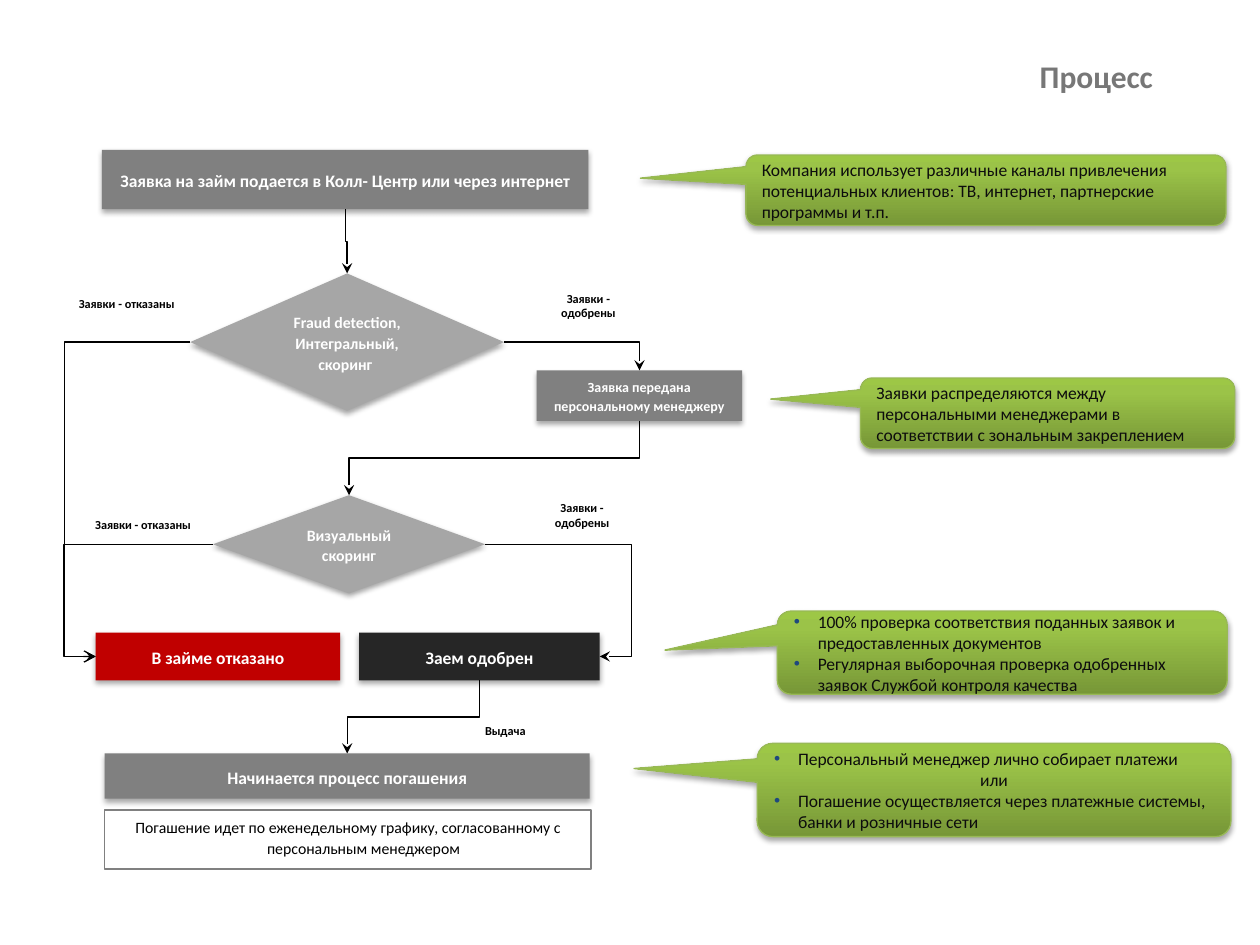
from copy import deepcopy

from lxml import etree
from pptx import Presentation
from pptx.dml.color import RGBColor
from pptx.enum.dml import MSO_LINE
from pptx.enum.shapes import MSO_CONNECTOR, MSO_SHAPE
from pptx.enum.text import MSO_ANCHOR, MSO_AUTO_SIZE, PP_ALIGN
from pptx.oxml.ns import qn
from pptx.util import Inches, Pt

RECT, DECISION = MSO_SHAPE.RECTANGLE, MSO_SHAPE.FLOWCHART_DECISION
CALLOUT = MSO_SHAPE.ROUNDED_RECTANGULAR_CALLOUT
ELBOW, SOLID = MSO_CONNECTOR.ELBOW, MSO_LINE.SOLID
LEFT, CENTER, RIGHT = PP_ALIGN.LEFT, PP_ALIGN.CENTER, PP_ALIGN.RIGHT
TOP_ANCHOR, MIDDLE = MSO_ANCHOR.TOP, MSO_ANCHOR.MIDDLE
FIT_TEXT, NO_FIT = MSO_AUTO_SIZE.SHAPE_TO_FIT_TEXT, MSO_AUTO_SIZE.NONE

WHITE, BLACK = RGBColor(255, 255, 255), RGBColor(0, 0, 0)
TITLE_GRAY = RGBColor(0x77, 0x77, 0x77)
STEP_GRAY = RGBColor(0x80, 0x80, 0x80)
DECISION_GRAY = RGBColor(0xA6, 0xA6, 0xA6)
REFUSED_RED = RGBColor(0xC0, 0, 0)
APPROVED_DARK = RGBColor(0x26, 0x26, 0x26)
NOTE_TEXT = RGBColor(0x0D, 0x0D, 0x0D)
NOTE_LINE = RGBColor(0x98, 0xB9, 0x55)
NOTE_STOPS = [(0, RGBColor(0x77, 0x97, 0x37)),
              (0.8, RGBColor(0x9B, 0xC3, 0x48)),
              (1, RGBColor(0x9D, 0xC7, 0x46))]
BULLET_BLUE = RGBColor(0x1F, 0x49, 0x7D)

COLUMNS, ROWS = 100, 75
TOP, WEST, BOTTOM, EAST = range(4)  # connection sites


def add_xml(parent, tag, **attributes):
    return etree.SubElement(parent, qn(tag), attributes)


def add_shadow(effects, blur, distance, degrees, opacity):
    shadow = add_xml(effects, "a:outerShdw", blurRad=str(Pt(blur)), dist=str(Pt(distance)),
                     dir=str(degrees * 60000), algn="ctr", rotWithShape="0")
    color = add_xml(shadow, "a:srgbClr", val=str(BLACK))
    add_xml(color, "a:alpha", val=str(opacity * 1000))


def site(shape, side):
    """Middle of one side of a shape."""
    x = shape.left + shape.width * {WEST: 0, EAST: 1}.get(side, 0.5)
    y = shape.top + shape.height * {TOP: 0, BOTTOM: 1}.get(side, 0.5)
    return int(x), int(y)


class FlowSlide:
    font = "Calibri"
    detour = Inches(0.25)  # how far a side loop stands off

    def __init__(self, deck):
        self.slide = deck.slides.add_slide(deck.slide_layouts[5])
        self.column = deck.slide_width / COLUMNS
        self.row = deck.slide_height / ROWS

    def place(self, x, y, width, height):
        return (round(x * self.column), round(y * self.row),
                round(width * self.column), round(height * self.row))

    def style(self, paragraph, size, color, bold=False, align=CENTER):
        paragraph.alignment = align
        font = paragraph.font
        font.name, font.size, font.bold = self.font, Pt(size), bold
        font.color.rgb = color

    def hang(self, paragraph, indent):
        properties = paragraph._p.get_or_add_pPr()
        properties.set("marL", str(Inches(indent)))
        properties.set("indent", str(-Inches(indent)))
        return properties

    def title(self, text, area):
        title = self.slide.shapes.title
        title.left, title.top, title.width, title.height = self.place(*area)
        frame = title.text_frame
        frame.auto_size, frame.vertical_anchor = NO_FIT, MIDDLE
        frame.text = text
        paragraph = frame.paragraphs[0]
        self.style(paragraph, 18, TITLE_GRAY, True, RIGHT)
        effects = add_xml(paragraph.runs[0].font._element, "a:effectLst")
        add_shadow(effects, 3, 3, 45, 45)

    def shape(self, kind, area, shadow=True):
        shape = self.slide.shapes.add_shape(kind, *self.place(*area))
        shape.shadow.inherit = False
        if shadow:
            add_shadow(shape._element.spPr.find(qn("a:effectLst")), 3.1, 1.8, 90, 35)
        shape.text_frame.word_wrap = True
        return shape

    def step(self, text, area, fill=STEP_GRAY, size=10, kind=RECT):
        step = self.shape(kind, area)
        step.fill.solid()
        step.fill.fore_color.rgb = fill
        step.line.fill.background()
        step.text_frame.text = text
        for paragraph in step.text_frame.paragraphs:
            paragraph.line_spacing = 1.1
            self.style(paragraph, size, WHITE, True)
        return step

    def detail(self, text, area):
        detail = self.shape(RECT, area, shadow=False)
        detail.fill.solid()
        detail.fill.fore_color.rgb = WHITE
        detail.line.color.rgb, detail.line.width = STEP_GRAY, Pt(1)
        frame = detail.text_frame
        frame.text, frame.vertical_anchor = text, TOP_ANCHOR
        paragraph = frame.paragraphs[0]
        self.hang(paragraph, 0.25)
        paragraph.line_spacing, paragraph.space_after = 1.1, Pt(2)
        self.style(paragraph, 9, BLACK)

    def label(self, text, area):
        label = self.slide.shapes.add_textbox(*self.place(*area))
        frame = label.text_frame
        frame.word_wrap, frame.auto_size = True, FIT_TEXT
        frame.text = text
        self.style(frame.paragraphs[0], 7, BLACK, True)

    def note(self, lines, area, pointer, bulleted=False):
        note = self.shape(CALLOUT, area)
        for index, value in enumerate((*pointer, 0.167)):
            note.adjustments[index] = value
        # Three-stop gradient running upwards
        note.fill.gradient()
        note.fill.gradient_angle = 90
        stops = note._element.spPr.find(qn("a:gradFill")).find(qn("a:gsLst"))
        stops.append(deepcopy(stops[-1]))
        for stop, (position, color) in zip(note.fill.gradient_stops, NOTE_STOPS):
            stop.position, stop.color.rgb = position, color
        note.line.color.rgb, note.line.width = NOTE_LINE, Pt(0.75)
        frame = note.text_frame
        frame.margin_top = frame.margin_bottom = 0
        frame.text = "\n".join(lines)
        for paragraph in frame.paragraphs:
            joining_word = paragraph.text == "или"
            if bulleted and not joining_word:
                properties = self.hang(paragraph, 0.19)
                add_xml(add_xml(properties, "a:buClr"), "a:srgbClr", val=str(BULLET_BLUE))
                add_xml(properties, "a:buFont", typeface="Arial")
                add_xml(properties, "a:buChar", char="•")
            self.style(paragraph, 10, NOTE_TEXT, align=CENTER if joining_word else LEFT)

    def flow(self, start, start_side, end, end_side, head="stealth"):
        (x1, y1), (x2, y2) = site(start, start_side), site(end, end_side)
        link = self.slide.shapes.add_connector(ELBOW, x1, y1, x2, y2)
        link.begin_connect(start, start_side)
        link.end_connect(end, end_side)
        properties = link._element.spPr
        geometry = properties.find(qn("a:prstGeom"))
        if start_side == end_side:  # loop around the side
            bend = 1 + self.detour / abs(x2 - x1)
            guides = geometry.find(qn("a:avLst"))
            add_xml(guides, "a:gd", name="adj1", fmla=f"val {round(bend * 100000)}")
        elif start_side == EAST:  # a single corner
            geometry.set("prst", "bentConnector2")
        else:  # downwards: a turned frame around the same centre
            across, down = abs(x2 - x1), y2 - y1
            link.left = (x1 + x2 - down) // 2
            link.top = (y1 + y2 - across) // 2
            link.width, link.height = down, across
            rightwards = x2 > x1
            link.rotation = 270 if rightwards else 90
            link._element.flipH = rightwards
        link.line.color.rgb, link.line.width = BLACK, Pt(0.75)
        link.line.dash_style = SOLID
        add_xml(properties.find(qn("a:ln")), "a:tailEnd", type=head)
        add_xml(properties, "a:effectLst")


def main():
    deck = Presentation()
    deck.slide_width, deck.slide_height = Inches(10), Inches(7.5)
    page = FlowSlide(deck)
    page.title("Процесс", (23.5, 3.8, 69, 4.5))

    # Steps and decisions
    request = page.step("Заявка на займ подается в Колл- Центр или через интернет",
                        (8.1, 11.9, 38.6, 4.7))
    manager = page.step("Заявка передана персональному менеджеру",
                        (42.6, 29.4, 16.3, 4), size=8)
    refused = page.step("В займе отказано", (7.6, 50.2, 19.4, 3.8), REFUSED_RED)
    approved = page.step("Заем одобрен", (28.5, 50.2, 19.1, 3.8), APPROVED_DARK)
    repayment = page.step("Начинается процесс погашения", (8.3, 59.8, 38.5, 3.6))
    page.detail("Погашение идет по еженедельному графику, согласованному с "
                "персональным менеджером", (8.3, 64.3, 38.6, 4.7))
    scoring = page.step("Fraud detection,\nИнтегральный, скоринг ",
                        (15.1, 21.7, 24.9, 10.9), DECISION_GRAY, 9, DECISION)
    visual = page.step("Визуальный скоринг", (16.9, 39.3, 21.6, 7.8),
                       DECISION_GRAY, 9, DECISION)

    # Flow
    page.flow(request, BOTTOM, scoring, TOP)
    page.flow(scoring, EAST, manager, TOP)
    page.flow(manager, BOTTOM, visual, TOP)
    page.flow(scoring, WEST, refused, WEST)
    page.flow(visual, WEST, refused, WEST, head="arrow")
    page.flow(visual, EAST, approved, EAST)
    page.flow(approved, BOTTOM, repayment, TOP)

    # Branch labels
    for text, area in [("Заявки - отказаны", (5, 23, 10.1, 2.2)),
                       ("Заявки - одобрены", (42.7, 22.6, 8, 3.4)),
                       ("Заявки - отказаны", (6.3, 40.6, 10.1, 2.2)),
                       ("Заявки - одобрены", (42.2, 39.2, 8, 3.4)),
                       ("Выдача", (32, 56.9, 16.2, 2.2))]:
        page.label(text, area)

    # Notes
    page.note(["Компания использует различные каналы привлечения потенциальных клиентов: "
               "ТВ, интернет, партнерские программы и т.п."],
              (59.2, 12.3, 38.1, 5.6), (-0.72, -0.17))
    page.note(["Заявки распределяются между персональными менеджерами в соответствии "
               "с зональным закреплением"], (68.3, 30, 29.7, 5.6), (-0.74, -0.2))
    page.note(["100% проверка соответствия поданных заявок и предоставленных документов",
               "Регулярная выборочная проверка одобренных заявок Службой контроля качества"],
              (61.7, 48.5, 35.7, 6.6), (-0.75, -0.03), bulleted=True)
    page.note(["Персональный менеджер лично собирает платежи", "или",
               "Погашение осуществляется через платежные системы, банки и розничные сети"],
              (60.1, 59, 37.6, 7.4), (-0.76, -0.23), bulleted=True)

    deck.save("out.pptx")


if __name__ == "__main__":
    main()
